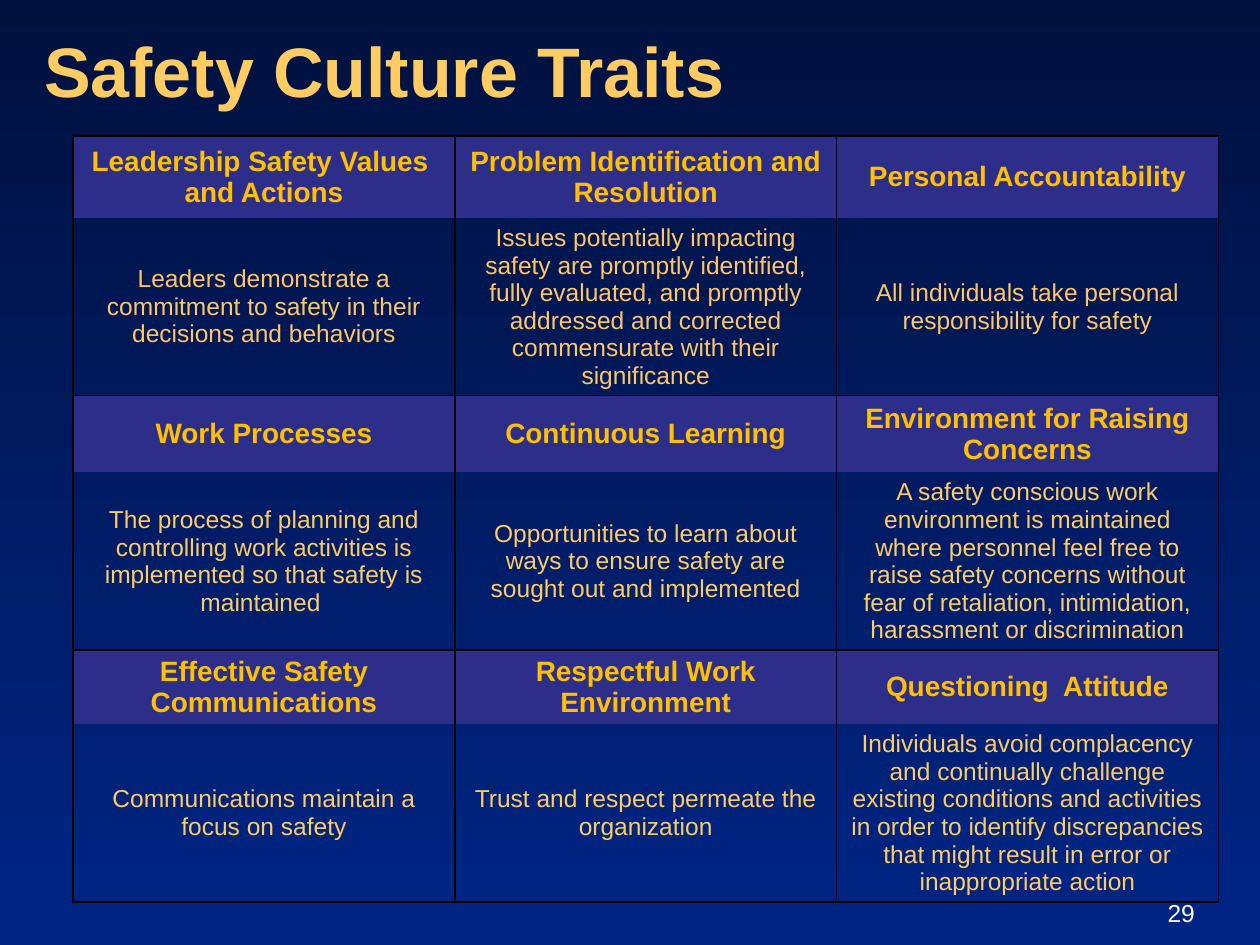
from dataclasses import dataclass

from lxml import etree
from pptx import Presentation
from pptx.dml.color import RGBColor
from pptx.enum.text import MSO_ANCHOR, MSO_AUTO_SIZE, PP_ALIGN
from pptx.oxml.ns import qn
from pptx.util import Inches, Pt

MIDDLE, TOP = MSO_ANCHOR.MIDDLE, MSO_ANCHOR.TOP
LEFT, CENTER = PP_ALIGN.LEFT, PP_ALIGN.CENTER
NO_AUTOFIT = MSO_AUTO_SIZE.NONE
TITLE_ONLY = 5

WIDTH, HEIGHT = Inches(10), Inches(7.5)
COLUMN_WIDTH = Inches(3.03)
BODY_HEIGHT = Inches(1.41)
BORDER_WIDTH = Pt(1)
COLORS = {
    "top": "00113E", "bottom": "002585", "title": "FFCB63", "number": "FFFFFF",
    "heading": "FFC000", "first_body": "FFC566", "body": "FFCB63",
    "band": "2D2D8A", "border": "000000",
}
FORMATS = {
    "title": {"name": "Arial", "size": Pt(40), "bold": True},
    "number": {"name": "Arial", "size": Pt(14), "bold": False},
    "heading": {"name": "Arial", "size": Pt(16), "bold": True},
    "body": {"name": "Arial", "size": Pt(14), "bold": False},
}


@dataclass
class Trait:
    heading: str
    body: str


@dataclass
class Band:
    heading_height: float
    body_color: str
    traits: list[Trait]


BANDS = [
    Band(0.65, "first_body", [
        Trait("Leadership Safety Values \nand Actions",
              "Leaders demonstrate a commitment to safety in their decisions and behaviors"),
        Trait("Problem Identification and Resolution",
              "Issues potentially impacting safety are promptly identified, fully evaluated, "
              "and promptly addressed and corrected commensurate with their significance"),
        Trait("Personal Accountability",
              "All individuals take personal responsibility for safety"),
    ]),
    Band(0.61, "body", [
        Trait("Work Processes",
              "The process of planning and controlling work activities is implemented "
              "so that safety is maintained "),
        Trait("Continuous Learning",
              "Opportunities to learn about ways to ensure safety are sought out and implemented"),
        Trait("Environment for Raising Concerns",
              "A safety conscious work environment is maintained where personnel feel free to "
              "raise safety concerns without fear of retaliation, intimidation, harassment "
              "or discrimination"),
    ]),
    Band(0.59, "body", [
        Trait("Effective Safety Communications", "Communications maintain a focus on safety"),
        Trait("Respectful Work Environment", "Trust and respect permeate the organization"),
        Trait("Questioning  Attitude",
              "Individuals avoid complacency and continually challenge existing conditions and "
              "activities in order to identify discrepancies that might result in error or "
              "inappropriate action"),
    ]),
]


def rgb(color: str) -> RGBColor:
    """Look up a named colour."""
    return RGBColor.from_string(COLORS[color])


def write(frame, text: str, style: str, color: str, align) -> None:
    """Fill a text frame with formatted paragraphs."""
    frame.text = text
    for para in frame.paragraphs:
        para.alignment = align
        for span in para.runs:
            for name, value in FORMATS[style].items():
                setattr(span.font, name, value)
            span.font.color.rgb = rgb(color)


def set_borders(cell, open_side: str) -> None:
    """Draw the cell's border lines, leaving one side open."""
    properties = cell._tc.get_or_add_tcPr()
    for index, side in enumerate(("lnL", "lnR", "lnT", "lnB")):
        line = etree.Element(qn(f"a:{side}"), w=str(BORDER_WIDTH))
        if side == open_side:
            etree.SubElement(line, qn("a:noFill"))
        else:
            fill = etree.SubElement(line, qn("a:solidFill"))
            etree.SubElement(fill, qn("a:srgbClr"), val=COLORS["border"])
        properties.insert(index, line)


def fill_cell(cell, text: str, style: str, color: str) -> None:
    """Write and paint a heading or body cell."""
    write(cell.text_frame, text, style, color, CENTER)
    cell.vertical_anchor = MIDDLE
    cell.margin_top = cell.margin_bottom = 0
    if style == "heading":
        cell.fill.solid()
        cell.fill.fore_color.rgb = rgb("band")
    else:
        cell.fill.background()
    set_borders(cell, "lnB" if style == "heading" else "lnT")


def add_traits(page) -> None:
    """Add the table of heading and body rows."""
    columns = len(BANDS[0].traits)
    heights = [height for band in BANDS
               for height in (Inches(band.heading_height), BODY_HEIGHT)]
    table = page.shapes.add_table(
        len(heights), columns, Inches(0.58), Inches(1.08),
        COLUMN_WIDTH * columns, sum(heights)).table
    table.first_row = table.horz_banding = False
    for column in table.columns:
        column.width = COLUMN_WIDTH
    for row, height in zip(table.rows, heights):
        row.height = height
    for index, band in enumerate(BANDS):
        for column, trait in enumerate(band.traits):
            fill_cell(table.cell(2 * index, column), trait.heading, "heading", "heading")
            fill_cell(table.cell(2 * index + 1, column), trait.body, "body", band.body_color)


def paint_background(page) -> None:
    """Shade the page from top to bottom."""
    fill = page.background.fill
    fill.gradient()
    fill.gradient_angle = 270
    for stop, color, position in zip(fill.gradient_stops, ("top", "bottom"), (0, 1)):
        stop.color.rgb = rgb(color)
        stop.position = position


def add_title(page) -> None:
    """Place and write the title."""
    title = page.shapes.title
    place = {"left": 0.25, "top": 0.17, "width": 6.5, "height": 0.75}
    for name, value in place.items():
        setattr(title, name, Inches(value))
    frame = title.text_frame
    frame.auto_size = NO_AUTOFIT
    frame.vertical_anchor = TOP
    write(frame, "Safety Culture Traits", "title", "title", LEFT)


def add_number(page) -> None:
    """Add the page number."""
    box = page.shapes.add_textbox(Inches(9.02), Inches(7.08), Inches(0.71), Inches(0.33))
    box.text_frame.word_wrap = True
    write(box.text_frame, "29", "number", "number", CENTER)


def main() -> None:
    """Build and save the deck."""
    deck = Presentation()
    deck.slide_width, deck.slide_height = WIDTH, HEIGHT
    page = deck.slides.add_slide(deck.slide_layouts[TITLE_ONLY])
    paint_background(page)
    add_number(page)
    add_title(page)
    add_traits(page)
    deck.save("out.pptx")


if __name__ == "__main__":
    main()
